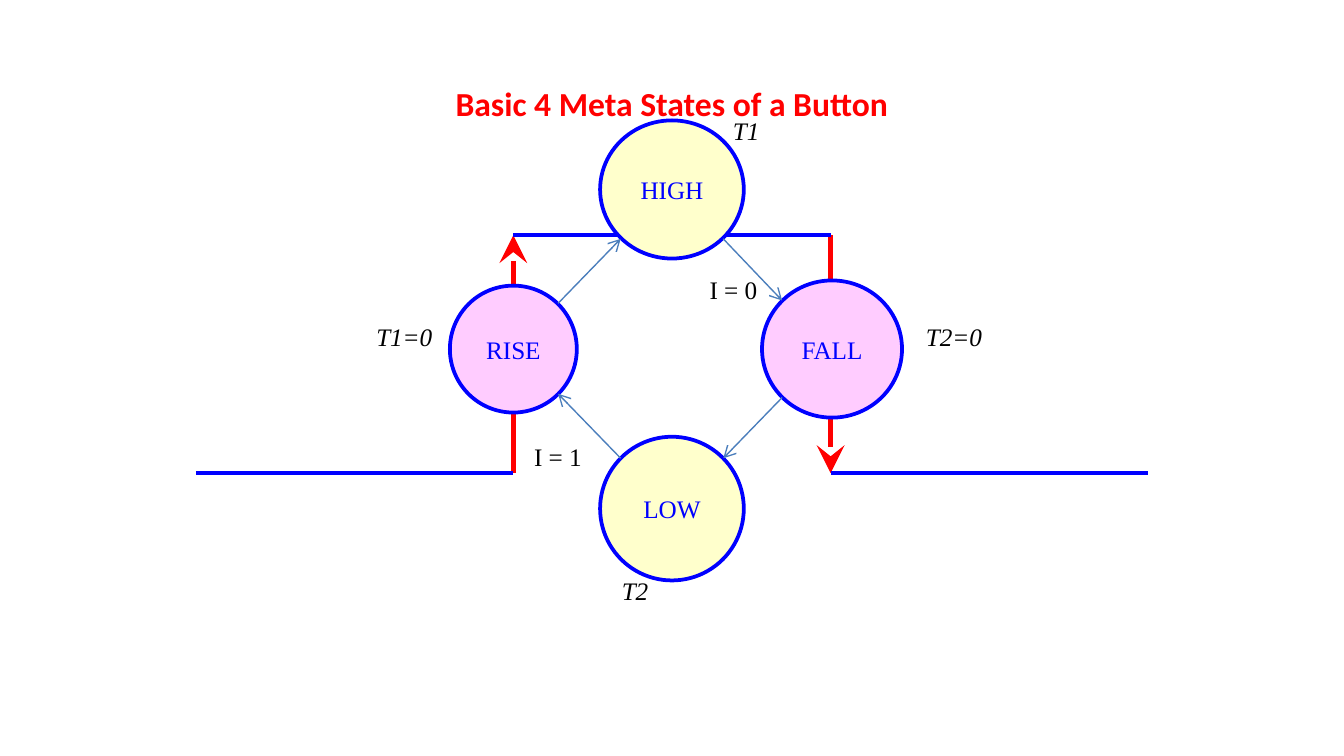
"""Build a slide with the four meta states of a button around its signal edge."""
from lxml import etree
from pptx import Presentation
from pptx import util as u
from pptx.dml.color import RGBColor
from pptx.enum import shapes, text
from pptx.oxml.ns import qn

COLORS = {"signal": "0000FF", "edge": "FF0000", "transition": "4B7EBC",
          "steady": "FFFFCC", "changing": "FFCCFF", "label": "000000"}
SERIF = "Times New Roman"


def draw_line(start, end, color, weight, head=None, size="med"):
    line = slide.shapes.add_connector(
        shapes.MSO_CONNECTOR.STRAIGHT, *[u.Pt(v) for v in (*start, *end)])
    line.line.color.rgb = RGBColor.from_string(COLORS[color])
    line.line.width = u.Pt(weight)
    if head:
        etree.SubElement(line.line._get_or_add_ln(), qn("a:tailEnd"),
                         type=head, w=size, len=size)
    etree.SubElement(line._element.spPr, qn("a:effectLst"))


def write(shape, words, color, size=13.5, font=SERIF, align="CENTER"):
    frame = shape.text_frame
    frame.word_wrap = False
    frame.vertical_anchor = text.MSO_ANCHOR.MIDDLE
    paragraph = frame.paragraphs[0]
    paragraph.alignment = getattr(text.PP_ALIGN, align)
    run = paragraph.add_run()
    run.text = words
    run.font.name = font
    run.font.size = u.Pt(size)
    run.font.color.rgb = RGBColor.from_string(COLORS[color])
    return run


deck = Presentation()
deck.slide_width, deck.slide_height = u.Pt(720), u.Pt(405)
slide = deck.slides.add_slide(deck.slide_layouts[5])

heading = slide.shapes.title
heading.left, heading.top, heading.width, heading.height = [
    u.Pt(v) for v in (235.5, 41, 249, 29)]
write(heading, "Basic 4 Meta States of a Button", "edge", 18, "Calibri").font.bold = True

rise_x, fall_x, high_y, low_y = 275, 445, 126, 253.5
draw_line((rise_x, low_y), (rise_x, high_y), "edge", 3, "stealth", "lg")
draw_line((fall_x, high_y), (fall_x, low_y), "edge", 3, "stealth", "lg")
for left, right, level in [(rise_x, fall_x, high_y), (105, rise_x, low_y),
                           (fall_x, 615, low_y)]:
    draw_line((left, level), (right, level), "signal", 2.25)

for name, fill, left, top, width, height in [
        ("FALL", "changing", 408.25, 150.25, 75, 73.5),
        ("HIGH", "steady", 321.5, 64.5, 77, 74),
        ("LOW", "steady", 321.5, 234, 77, 77),
        ("RISE", "changing", 241, 153, 68, 68)]:
    state = slide.shapes.add_shape(
        shapes.MSO_SHAPE.OVAL, *[u.Pt(v) for v in (left, top, width, height)])
    state.shadow.inherit = False
    state.fill.solid()
    state.fill.fore_color.rgb = RGBColor.from_string(COLORS[fill])
    state.line.color.rgb = RGBColor.from_string(COLORS["signal"])
    state.line.width = u.Pt(2)
    write(state, name, "signal")

for start, end in [((299, 162.5), (332.5, 128)), ((387.5, 128), (419, 161)),
                   ((419, 213), (387.5, 245.5)), ((332.5, 245.5), (299, 211))]:
    draw_line(start, end, "transition", 0.75, "arrow")

for words, left, top, width, italic in [
        ("I = 1", 279, 232.5, 40.5, False), ("I = 0", 373, 143, 40.5, False),
        ("T1", 385.5, 58, 28.5, True), ("T1=0", 194.5, 168, 44.5, True),
        ("T2=0", 489, 168.5, 44.5, True), ("T2", 326, 304.5, 28.5, True)]:
    label = slide.shapes.add_textbox(*[u.Pt(v) for v in (left, top, width, 24)])
    write(label, words, "label", align="LEFT").font.italic = italic

deck.save("out.pptx")
